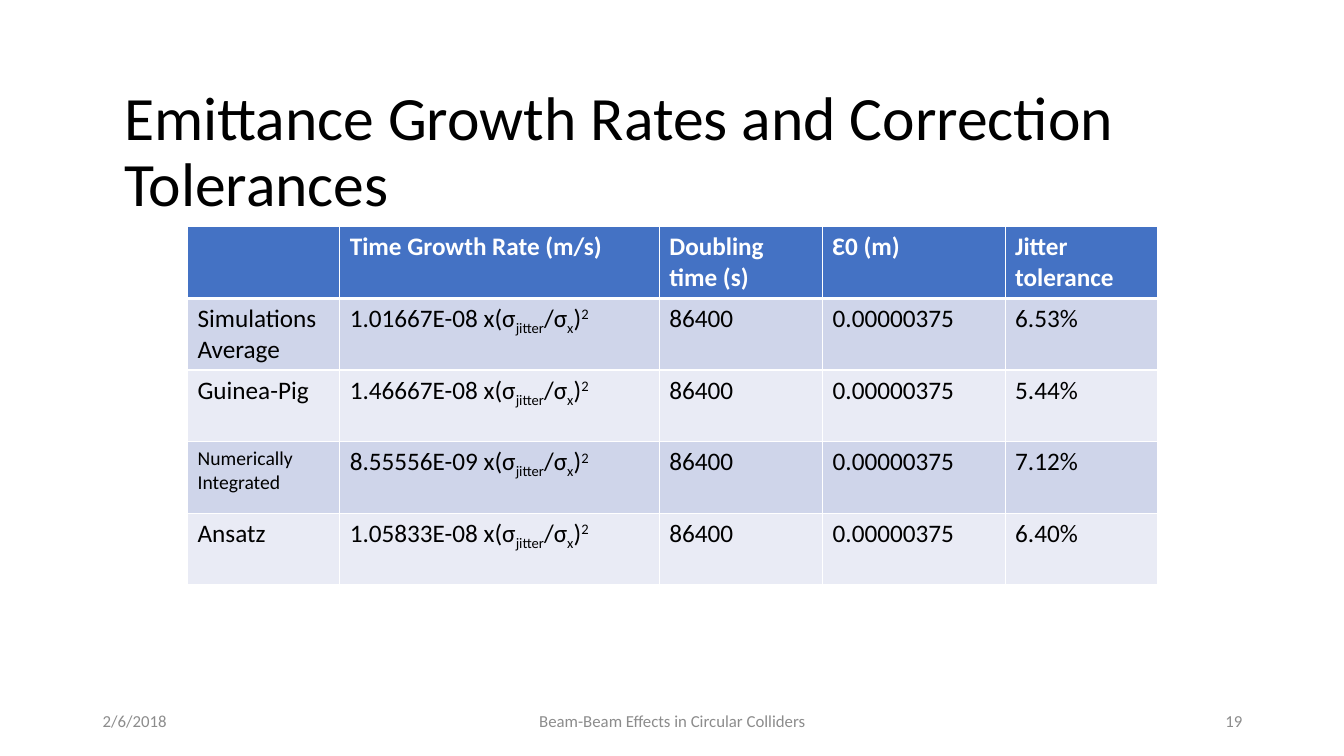
from lxml.etree import SubElement
from pptx import Presentation
from pptx.dml.color import RGBColor
from pptx.enum.text import MSO_ANCHOR, MSO_AUTO_SIZE, PP_ALIGN
from pptx.oxml.ns import qn
from pptx.util import Inches, Pt

COLORS = {"text": "000000", "white": "FFFFFF", "footer": "8C8C8C",
          "header": "4472C4", "odd": "CFD5EA", "even": "E9EBF5"}
FONT = "Calibri"
TITLE = "Emittance Growth Rates and Correction Tolerances"
HEADERS = ["", "Time Growth Rate (m/s)", "Doubling time (s)", "Ɛ0 (m)", "Jitter tolerance"]
METHODS = [  # name, name size, growth rate, jitter tolerance
    ("Simulations Average", 18, "1.01667E-08", "6.53%"),
    ("Guinea-Pig", 18, "1.46667E-08", "5.44%"),
    ("Numerically Integrated", 14, "8.55556E-09", "7.12%"),
    ("Ansatz", 18, "1.05833E-08", "6.40%"),
]
DOUBLING_TIME = "86400"
EMITTANCE = "0.00000375"
JITTER_RATIO = [(" x(σ", 0), ("jitter", -25), ("/σ", 0), ("x", -25), (")", 0), ("2", 30)]
COLUMN_WIDTHS = [1.51, 3.17, 1.62, 1.81, 1.51]
ROW_HEIGHT = 0.71
TABLE_LEFT, TABLE_TOP = 1.86, 2.25
FOOTERS = [
    ("2/6/2018", 0.92, 3, PP_ALIGN.LEFT),
    ("Beam-Beam Effects in Circular Colliders", 4.42, 4.5, PP_ALIGN.CENTER),
    ("19", 9.42, 3, PP_ALIGN.RIGHT),
]


def write(frame, text, size=18, color="text", bold=False, align=PP_ALIGN.LEFT):
    """Fill the frame; text is a string or a list of (text, baseline percent)."""
    frame.word_wrap = True
    para = frame.paragraphs[0]
    para.alignment = align
    for part, baseline in [(text, 0)] if isinstance(text, str) else text:
        span = para.add_run()
        span.text = part
        span.font.name = FONT
        span.font.size = Pt(size)
        span.font.bold = bold
        span.font.color.rgb = RGBColor.from_string(COLORS[color])
        if baseline:
            span.font._element.set("baseline", str(baseline * 1000))
    return para


def set_borders(cell, **widths):
    """Draw white lines; widths are points keyed by L, R, T and B."""
    properties = cell._tc.get_or_add_tcPr()
    for side, width in widths.items():
        line = SubElement(properties, qn(f"a:ln{side}"), w=str(Pt(width)))
        fill = SubElement(line, qn("a:solidFill"))
        SubElement(fill, qn("a:srgbClr"), val=COLORS["white"])


def add_title(page):
    title = page.shapes.title
    title.left, title.top = Inches(1.13), Inches(0.8)
    title.width, title.height = Inches(11.5), Inches(1.45)
    title.text_frame.auto_size = MSO_AUTO_SIZE.NONE
    title.text_frame.vertical_anchor = MSO_ANCHOR.MIDDLE
    write(title.text_frame, TITLE, size=44).line_spacing = 0.9


def add_rates_table(page):
    rows = [[(text, 18) for text in HEADERS]]
    for name, name_size, rate, tolerance in METHODS:
        growth = [(rate + JITTER_RATIO[0][0], 0)] + JITTER_RATIO[1:]
        rows.append([(name, name_size), (growth, 18), (DOUBLING_TIME, 18),
                     (EMITTANCE, 18), (tolerance, 18)])
    table = page.shapes.add_table(
        len(rows), len(COLUMN_WIDTHS), Inches(TABLE_LEFT), Inches(TABLE_TOP),
        Inches(sum(COLUMN_WIDTHS)), Inches(ROW_HEIGHT * len(rows))).table
    for column, width in zip(table.columns, COLUMN_WIDTHS):
        column.width = Inches(width)
    for r, row in enumerate(rows):
        table.rows[r].height = Inches(ROW_HEIGHT)
        is_header = r == 0
        fill = "header" if is_header else ("odd" if r % 2 else "even")
        for c, (text, size) in enumerate(row):
            cell = table.cell(r, c)
            set_borders(cell, L=1, R=1, T=3 if r == 1 else 1, B=3 if is_header else 1)
            cell.fill.solid()
            cell.fill.fore_color.rgb = RGBColor.from_string(COLORS[fill])
            if text:
                write(cell.text_frame, text, size=size, bold=is_header,
                      color="white" if is_header else "text")


def add_footers(page):
    for text, left, width, align in FOOTERS:
        box = page.shapes.add_textbox(Inches(left), Inches(6.95), Inches(width), Inches(0.4))
        box.text_frame.vertical_anchor = MSO_ANCHOR.MIDDLE
        write(box.text_frame, text, size=12, color="footer", align=align)


def main():
    deck = Presentation()
    deck.slide_width, deck.slide_height = Inches(13.33), Inches(7.5)
    page = deck.slides.add_slide(deck.slide_layouts[5])
    add_title(page)
    add_rates_table(page)
    add_footers(page)
    deck.save("out.pptx")


if __name__ == "__main__":
    main()
